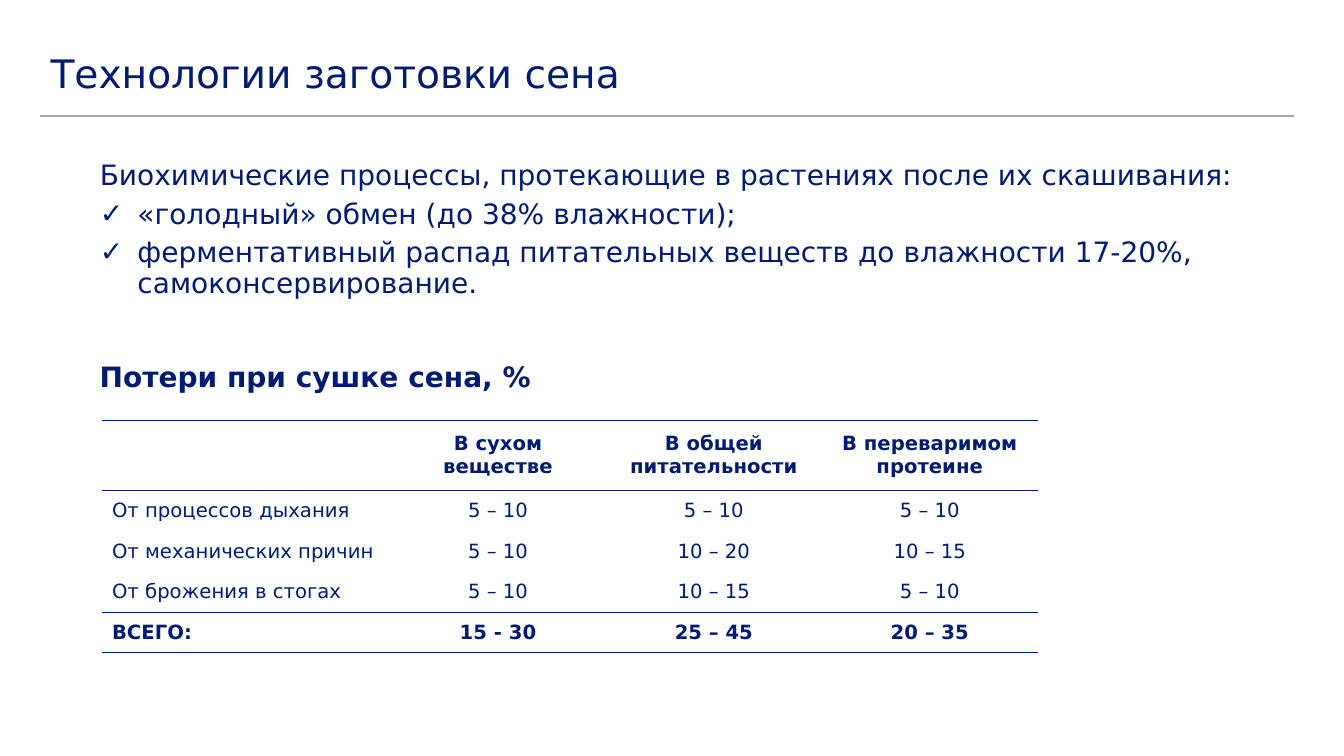
from dataclasses import dataclass

import pptx
import pptx.dml.color
import pptx.enum.shapes
import pptx.enum.text
import pptx.oxml.ns
import pptx.util
from lxml import etree
from pptx.util import Cm, Pt

NAVY = pptx.dml.color.RGBColor(0x00, 0x1B, 0x71)
GREY = pptx.dml.color.RGBColor(0xA6, 0xA6, 0xA6)
WHITE = pptx.dml.color.RGBColor(0xFF, 0xFF, 0xFF)
FONT = "DejaVu Sans"
ANCHOR = pptx.enum.text.MSO_ANCHOR
ALIGN = pptx.enum.text.PP_ALIGN
qn = pptx.oxml.ns.qn


@dataclass
class Line:
    text: str
    size: int = 20
    bold: bool = False
    align: ALIGN = ALIGN.LEFT
    bullet: str = ""
    spacing: float = 1.0
    after: int = 0


PROCESSES = [
    Line("Биохимические процессы, протекающие в растениях после их скашивания:",
         spacing=0.9, after=6),
    Line("«голодный» обмен (до 38% влажности);", bullet="✓", spacing=0.9, after=6),
    Line("ферментативный распад питательных веществ до влажности 17-20%, "
         "самоконсервирование.", bullet="✓", spacing=0.9, after=6),
]
LOSSES = [
    ["", "В сухом веществе", "В общей питательности", "В переваримом протеине"],
    ["От процессов дыхания", "5 – 10", "5 – 10", "5 – 10"],
    ["От механических причин", "5 – 10", "10 – 20", "10 – 15"],
    ["От брожения в стогах", "5 – 10", "10 – 15", "5 – 10"],
    ["ВСЕГО:", "15 - 30", "25 – 45", "20 – 35"],
]
TOTAL_ROW = len(LOSSES) - 1
RULED_EDGES = {0, 1, TOTAL_ROW, TOTAL_ROW + 1}


def place(sp, left: float, top: float, width: float, height: float) -> None:
    box = {"left": left, "top": top, "width": width, "height": height}
    for name, value in box.items():
        setattr(sp, name, Cm(value))


def set_bullet(p, char: str) -> None:
    pPr = p._p.get_or_add_pPr()
    indent = Cm(0.95) if char else 0
    pPr.set("marL", str(indent))
    pPr.set("indent", str(-indent))
    if char:
        etree.SubElement(pPr, qn("a:buFont"), typeface=FONT)
        etree.SubElement(pPr, qn("a:buChar"), char=char)
    else:
        etree.SubElement(pPr, qn("a:buNone"))


def write(tf, lines: list[Line]) -> None:
    for i, line in enumerate(lines):
        p = tf.paragraphs[0] if i == 0 else tf.add_paragraph()
        set_bullet(p, line.bullet)
        layout = {"alignment": line.align, "line_spacing": line.spacing,
                  "space_before": Pt(0), "space_after": Pt(line.after)}
        for name, value in layout.items():
            setattr(p, name, value)
        r = p.add_run()
        r.text = line.text
        look = {"name": FONT, "size": Pt(line.size), "bold": line.bold}
        for name, value in look.items():
            setattr(r.font, name, value)
        r.font.color.rgb = NAVY


def fit(tf, anchor: ANCHOR) -> None:
    frame = {"word_wrap": True, "vertical_anchor": anchor,
             "auto_size": pptx.enum.text.MSO_AUTO_SIZE.NONE}
    for name, value in frame.items():
        setattr(tf, name, value)


def set_borders(cell, row: int) -> None:
    """Rule the top and bottom edges that need it and clear the others."""
    tcPr = cell._tc.get_or_add_tcPr()
    ruled = {"L": False, "R": False,
             "T": row in RULED_EDGES, "B": row + 1 in RULED_EDGES}
    for side, visible in ruled.items():
        ln = etree.SubElement(tcPr, qn(f"a:ln{side}"), w=str(Pt(1)))
        if visible:
            fill = etree.SubElement(ln, qn("a:solidFill"))
            etree.SubElement(fill, qn("a:srgbClr"), val=str(NAVY))
        else:
            etree.SubElement(ln, qn("a:noFill"))


def add_losses_table(s) -> None:
    widths = [7.26] + [5.44] * 3
    heights = [1.78] + [1.02] * TOTAL_ROW
    table = s.shapes.add_table(len(heights), len(widths), Cm(2.57), Cm(10.59),
                               Cm(sum(widths)), Cm(sum(heights))).table
    table.first_row = table.horz_banding = False
    for column, width in zip(table.columns, widths):
        column.width = Cm(width)
    for i, (row, height) in enumerate(zip(table.rows, heights)):
        row.height = Cm(height)
        for j, cell in enumerate(row.cells):
            set_borders(cell, i)
            cell.fill.background()
            cell.vertical_anchor = ANCHOR.MIDDLE
            if LOSSES[i][j]:
                write(cell.text_frame, [Line(
                    LOSSES[i][j], size=14, bold=i in (0, TOTAL_ROW),
                    align=ALIGN.CENTER if j else ALIGN.LEFT)])


def main() -> None:
    prs = pptx.Presentation()
    prs.slide_width, prs.slide_height = Cm(33.87), Cm(19.05)
    s = prs.slides.add_slide(prs.slide_layouts[1])

    title = s.shapes.title
    place(title, 1.02, 1.14, 31.6, 1.52)
    fit(title.text_frame, ANCHOR.MIDDLE)
    write(title.text_frame, [Line("Технологии заготовки сена", size=28, spacing=0.9)])

    rule = s.shapes.add_connector(pptx.enum.shapes.MSO_CONNECTOR.STRAIGHT,
                                  Cm(1.02), Cm(2.92), Cm(32.62), Cm(2.92))
    rule.line.color.rgb = GREY
    rule.line.width = Pt(1)
    etree.SubElement(rule._element.spPr, qn("a:effectLst"))

    body = s.placeholders[1]
    place(body, 2.26, 3.94, 30.56, 5.44)
    body.fill.solid()
    body.fill.fore_color.rgb = WHITE
    fit(body.text_frame, ANCHOR.TOP)
    write(body.text_frame, PROCESSES)

    heading = s.shapes.add_textbox(Cm(2.26), Cm(8.92), Cm(22.56), Cm(1.12))
    fit(heading.text_frame, ANCHOR.MIDDLE)
    write(heading.text_frame, [Line("Потери при сушке сена, %", bold=True)])

    add_losses_table(s)
    prs.save("out.pptx")


if __name__ == "__main__":
    main()
